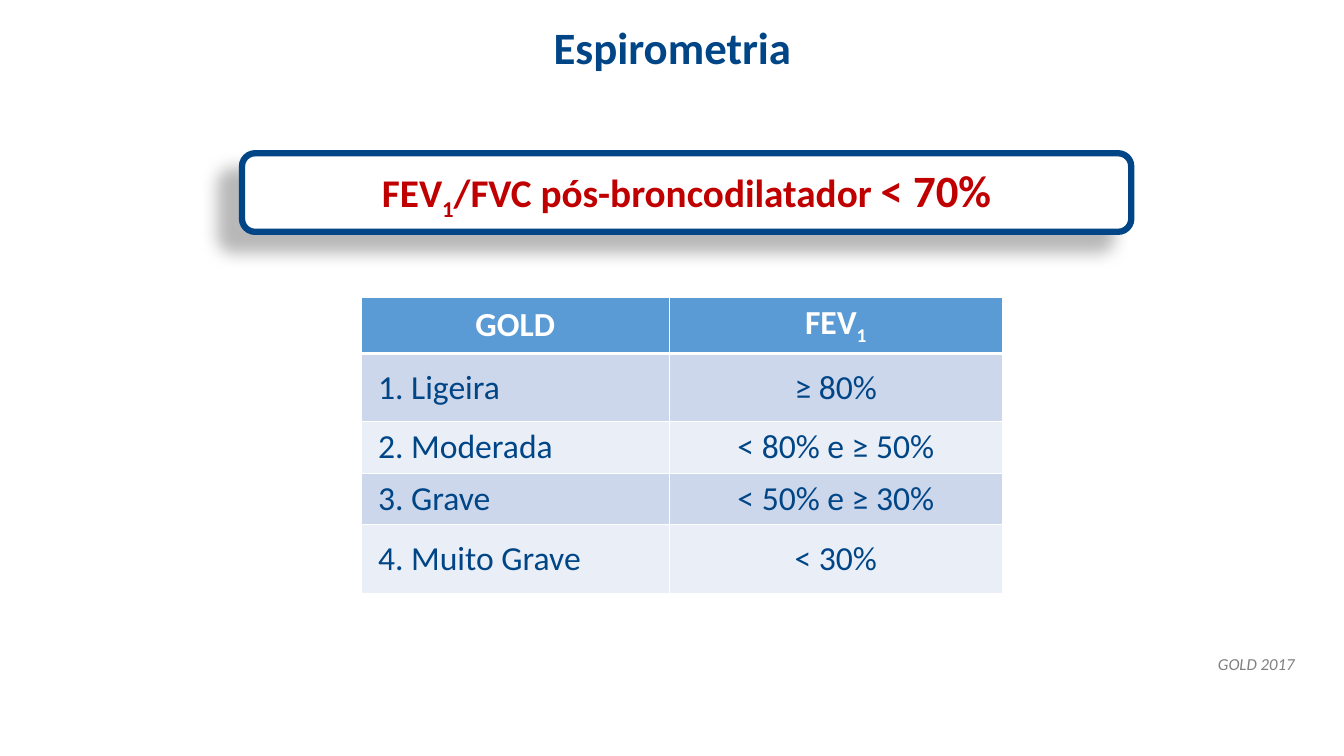
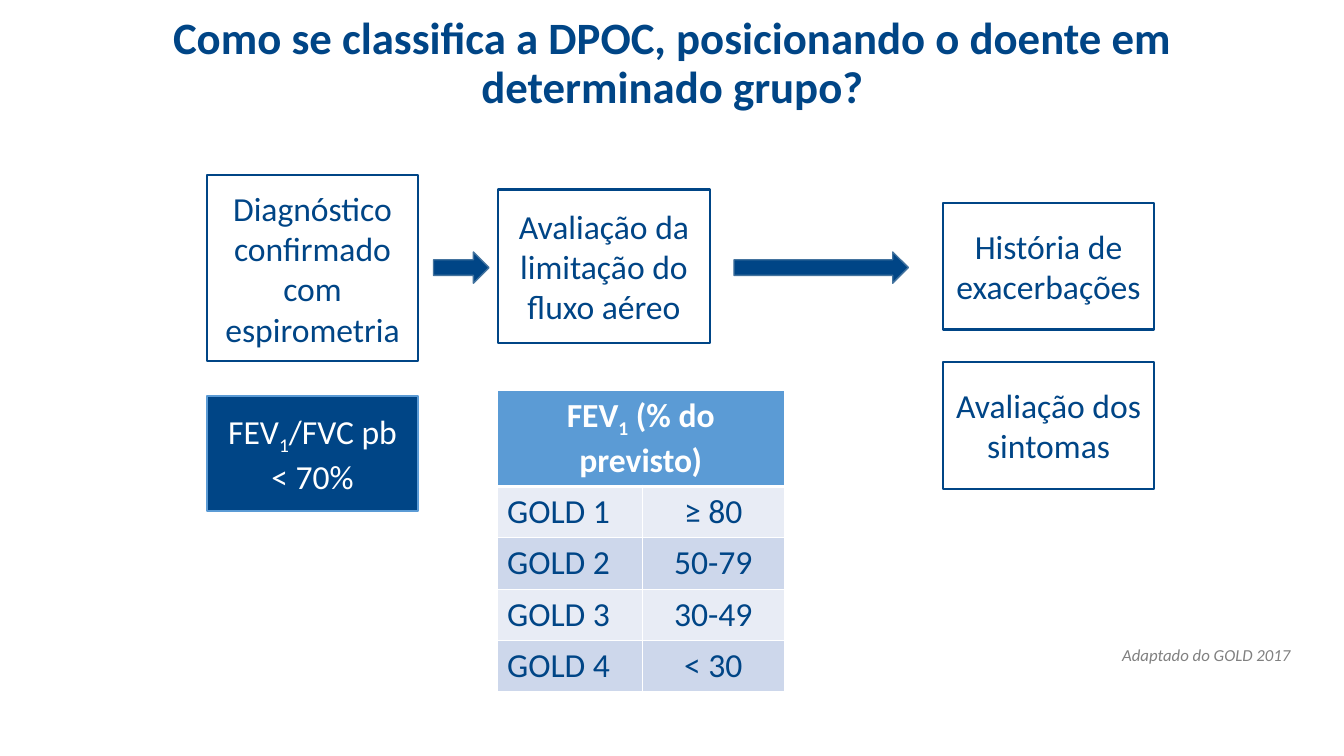
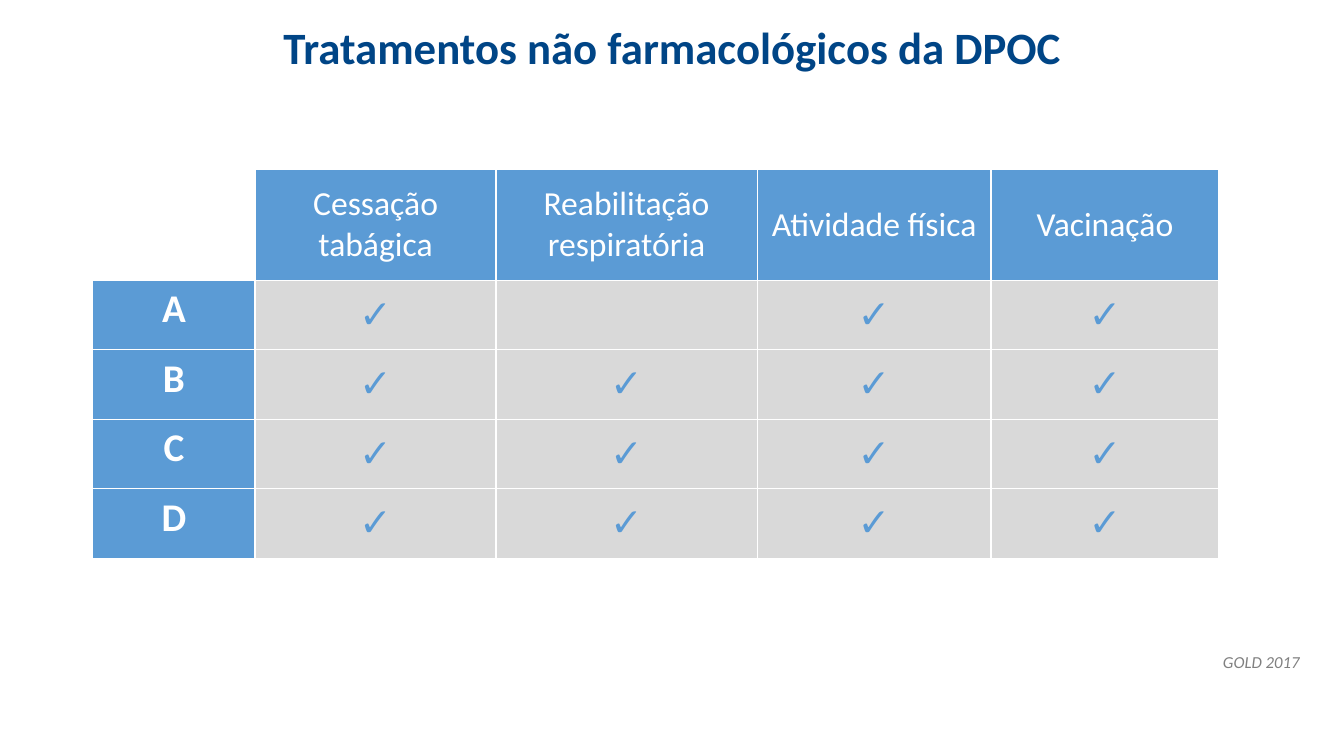
from lxml import etree
from pptx import Presentation
from pptx import util as u
from pptx.dml.color import RGBColor
from pptx.enum import shapes, text
from pptx.oxml.ns import qn

PX = 9144  # 100 px to the inch


class Theme:
    font = "Calibri"
    navy, blue, red, grey = "004586", "5B9BD5", "C00000", "808080"
    white, band, pale, paler = "FFFFFF", "CDD7EB", "EAEFF7", "E8ECF5"
    tick_fill, arrow_line = "D9D9D9", "43739E"
    title, big, body, source = 32, 28, 24, 12


LEFT, CENTER, RIGHT = text.PP_ALIGN.LEFT, text.PP_ALIGN.CENTER, text.PP_ALIGN.RIGHT
TOP, MIDDLE = text.MSO_ANCHOR.TOP, text.MSO_ANCHOR.MIDDLE


def write(tf, words, size=Theme.body, color=Theme.navy, align=CENTER, spacing=None, **font):
    """Append words to the first paragraph; each ₁ becomes a subscript 1 run."""
    p = tf.paragraphs[0]
    p.alignment = align
    if spacing:
        p.line_spacing = spacing
    before, mark, after = words.partition("₁")
    for piece, lowered in ((before, False), ("1" if mark else "", True), (after, False)):
        if not piece:
            continue
        r = p.add_run()
        r.text = piece
        for name, value in dict(name=Theme.font, size=u.Pt(size), **font).items():
            setattr(r.font, name, value)
        r.font.color.rgb = RGBColor.from_string(color)
        if lowered:
            r._r.get_or_add_rPr().set("baseline", "-25000")


def add_grid(s, left, top, cols, heights, rows):
    """Add a table whose cells are (words, look) pairs, with white rules."""
    frame = s.shapes.add_table(len(rows), len(cols), left * PX, top * PX,
                               sum(cols) * PX, sum(heights) * PX)
    table = frame.table
    table.first_row = table.horz_banding = False
    for column, width in zip(table.columns, cols):
        column.width = width * PX
    for i, (height, row) in enumerate(zip(heights, rows)):
        table.rows[i].height = height * PX
        for j, (words, look) in enumerate(row):
            cell = table.cell(i, j)
            look = dict(look)
            fill = look.pop("fill", None)
            rule = look.pop("rule", 1)
            cell.vertical_anchor = look.pop("anchor", MIDDLE)
            cell.margin_left = look.pop("inset", 10) * PX
            tcPr = cell._tc.get_or_add_tcPr()
            for side, width in (("L", 1), ("R", 1), ("T", 1), ("B", rule)):
                ln = etree.SubElement(tcPr, qn("a:ln" + side), w=str(u.Pt(width)))
                solid = etree.SubElement(ln, qn("a:solidFill"))
                etree.SubElement(solid, qn("a:srgbClr"), val=Theme.white)
            if fill:
                cell.fill.solid()
                cell.fill.fore_color.rgb = RGBColor.from_string(fill)
            else:
                cell.fill.background()
            write(cell.text_frame, words, **look)
    return table


prs = Presentation()
prs.slide_width, prs.slide_height = 1333 * PX, 750 * PX

# Title and source of every slide
slides = []
for title, title_top, source, source_left, source_top in (
    ("Espirometria", 17, "GOLD 2017", 27, 646),
    ("Como se classifica a DPOC, posicionando o doente em determinado grupo?", 31,
     "Adaptado do GOLD 2017", 23, 637),
    ("Tratamentos não farmacológicos da DPOC", 17, "GOLD 2017", 32, 644),
):
    s = prs.slides.add_slide(prs.slide_layouts[5])
    sp = s.shapes.title
    sp.left, sp.top, sp.width, sp.height = (v * PX for v in (67, title_top, 1200, 66))
    tf = sp.text_frame
    tf.auto_size, tf.vertical_anchor = text.MSO_AUTO_SIZE.NONE, MIDDLE
    write(tf, title, Theme.title, spacing=0.9, bold=True)
    sp = s.shapes.add_textbox(source_left * PX, source_top * PX, 1267 * PX, 32 * PX)
    sp.text_frame.word_wrap = True
    write(sp.text_frame, source, Theme.source, Theme.grey, RIGHT, 0.9, italic=True)
    slides.append(s)
spirometry, groups, treatments = slides

# Criterion box with its shadow
sp = spirometry.shapes.add_shape(shapes.MSO_SHAPE.ROUNDED_RECTANGLE,
                                 240 * PX, 152 * PX, 882 * PX, 78 * PX)
sp.fill.solid()
sp.fill.fore_color.rgb = RGBColor.from_string(Theme.white)
sp.line.color.rgb = RGBColor.from_string(Theme.navy)
sp.line.width = u.Pt(4.5)
sp.shadow.inherit = False
shadow = etree.SubElement(sp._element.spPr.find(qn("a:effectLst")), qn("a:outerShdw"),
                          blurRad=str(u.Pt(11.8)), dist=str(u.Pt(19.7)),
                          dir=str(141 * 60000), algn="ctr", rotWithShape="0")
black = etree.SubElement(shadow, qn("a:srgbClr"), val="000000")
etree.SubElement(black, qn("a:alpha"), val="28000")
write(sp.text_frame, "FEV₁/FVC pós-broncodilatador ", Theme.big, Theme.red, bold=True)
write(sp.text_frame, "< 70%", Theme.title, Theme.red, bold=True)

# Severity table
head = dict(fill=Theme.blue, color=Theme.white, bold=True, rule=3)
severity = [[("GOLD", head), ("FEV₁", head)]]
for i, (grade, limit) in enumerate((("1. Ligeira", "≥ 80%"), ("2. Moderada", "< 80% e ≥ 50%"),
                                    ("3. Grave", "< 50% e ≥ 30%"),
                                    ("4. Muito Grave", "< 30%"))):
    look = dict(fill=(Theme.band, Theme.pale)[i % 2])
    severity.append([(grade, dict(look, align=LEFT, inset=17)), (limit, look)])
add_grid(spirometry, 358, 295, (306, 330), (55, 68, 51, 51, 68), severity)

# Assessment flow
BOX, ARROW = shapes.MSO_SHAPE.RECTANGLE, shapes.MSO_SHAPE.RIGHT_ARROW
for preset, at, fill, line, width, color, words in (
    (BOX, (205, 174, 210, 184), None, Theme.navy, 1.5, Theme.navy,
     "Diagnóstico confirmado com espirometria"),
    (ARROW, (430, 250, 55, 31), Theme.navy, Theme.arrow_line, 1, Theme.white, ""),
    (BOX, (494, 188, 210, 152), None, Theme.navy, 1.5, Theme.navy,
     "Avaliação da limitação do fluxo aéreo"),
    (BOX, (205, 393, 210, 114), Theme.navy, Theme.blue, 1.5, Theme.white,
     "FEV₁/FVC pb < 70%"),
    (ARROW, (728, 250, 173, 31), Theme.navy, Theme.arrow_line, 1, Theme.white, ""),
    (BOX, (935, 201, 210, 126), None, Theme.navy, 1.5, Theme.navy, "História de exacerbações"),
    (BOX, (935, 359, 210, 126), None, Theme.navy, 1.5, Theme.navy, "Avaliação dos sintomas"),
):
    sp = groups.shapes.add_shape(preset, *(v * PX for v in at))
    sp.shadow.inherit = False
    if fill:
        sp.fill.solid()
        sp.fill.fore_color.rgb = RGBColor.from_string(fill)
    else:
        sp.fill.background()
    sp.line.color.rgb = RGBColor.from_string(line)
    sp.line.width = u.Pt(width)
    sp.text_frame.word_wrap = True
    write(sp.text_frame, words, color=color)

# Airflow limitation table
airflow = [[("FEV₁ (% do previsto)", head), ("", head)]]
for i, limit in enumerate(("≥ 80", "50-79", "30-49", "< 30")):
    look = dict(fill=(Theme.paler, Theme.band)[i % 2])
    airflow.append([(f"GOLD {i + 1}", dict(look, align=LEFT)), (limit, look)])
table = add_grid(groups, 493, 387, (144, 141), (95, 51, 51, 51, 51), airflow)
table.cell(0, 0).merge(table.cell(0, 1))

# Treatments by group
column = dict(fill=Theme.blue, color=Theme.white)
group = dict(column, size=Theme.big, bold=True, anchor=TOP)
tick = dict(fill=Theme.tick_fill, color=Theme.blue, size=Theme.big, bold=True)
matrix = [[("", {})] + [(name, column) for name in (
    "Cessação tabágica", "Reabilitação respiratória", "Atividade física", "Vacinação")]]
for letter in "ABCD":
    ticks = ["✓"] * 4
    if letter == "A":
        ticks[1] = ""
    matrix.append([(letter, group)] + [(mark, tick) for mark in ticks])
add_grid(treatments, 92, 168, (161, 239, 259, 232, 226), (110, 69, 69, 69, 69), matrix)

prs.save("out.pptx")
